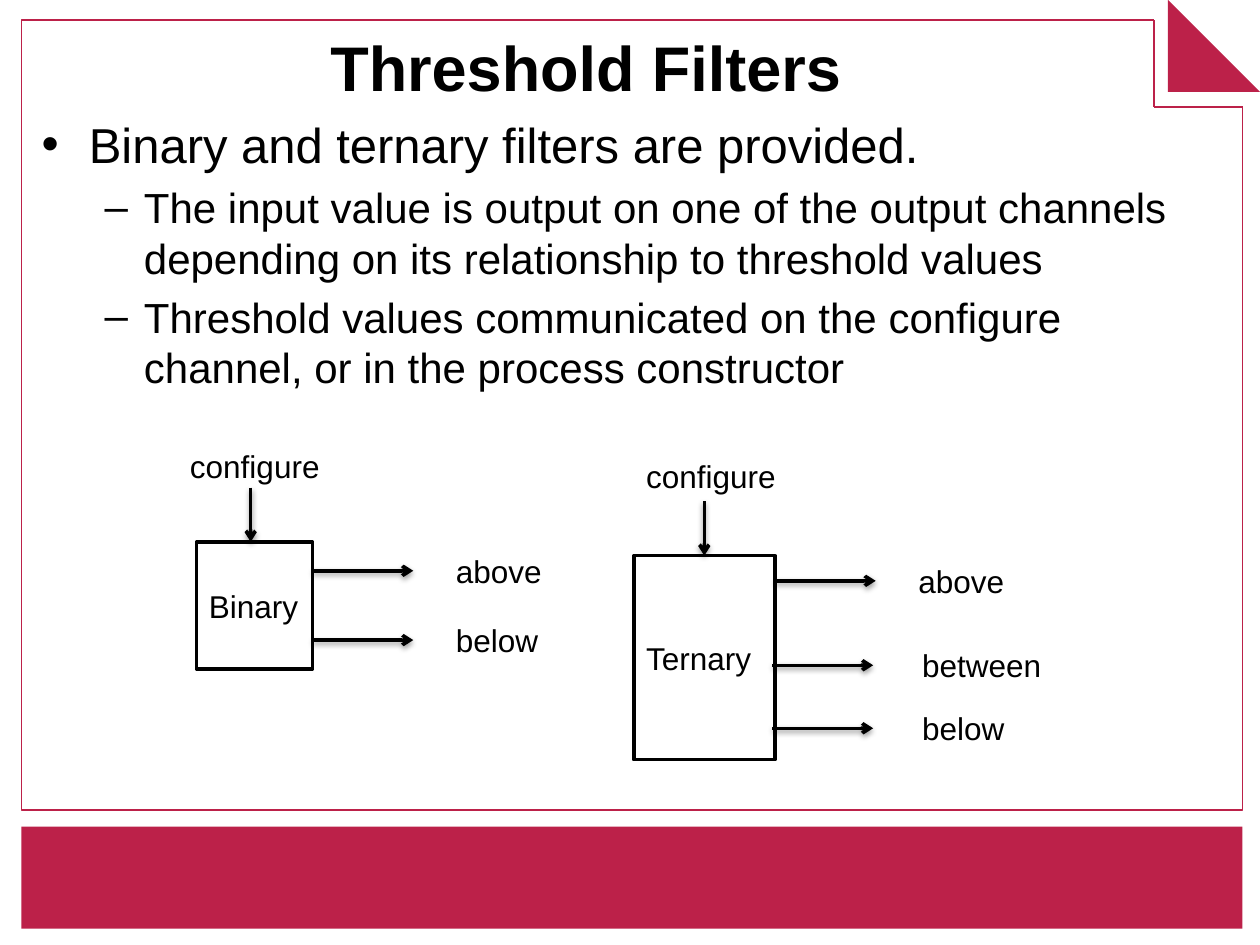
from lxml import etree
from pptx import Presentation
from pptx.dml.color import RGBColor
from pptx.enum.shapes import MSO_CONNECTOR, MSO_SHAPE
from pptx.enum.text import MSO_ANCHOR, MSO_AUTO_SIZE, PP_ALIGN
from pptx.oxml.ns import qn
from pptx.util import Inches, Pt

RECT, CORNER = MSO_SHAPE.RECTANGLE, MSO_SHAPE.RIGHT_TRIANGLE
LINE = MSO_CONNECTOR.STRAIGHT
LEFT, CENTER = PP_ALIGN.LEFT, PP_ALIGN.CENTER
TOP, MIDDLE = MSO_ANCHOR.TOP, MSO_ANCHOR.MIDDLE
FIXED = MSO_AUTO_SIZE.NONE
FONT, RED, BLACK, WHITE = "Arial", "BC2149", "000000", "FFFFFF"
COLS, ROWS = 100, 75
WIDTHS = {"configure": 12.4, "above": 8.9, "below": 8.6, "between": 11.6}


def color(code):
    """Turn a hex string into a colour."""
    return RGBColor.from_string(code)


def grid(*cells):
    """Turn grid cells, a hundred across the slide, into lengths."""
    return [Inches(cell * 10 / COLS) for cell in cells]


def write(para, size, bold=False, align=LEFT):
    """Format one paragraph and its runs."""
    para.alignment = align
    for run in para.runs:
        font = run.font
        font.name, font.size, font.bold = FONT, Pt(size), bold
        font.color.rgb = color(BLACK)


def block(slide, box, fill, edge=None, weight=0.75, kind=RECT):
    """Add a filled shape with an optional outline."""
    shape = slide.shapes.add_shape(kind, *grid(*box))
    shape.shadow.inherit = False
    shape.fill.solid()
    shape.fill.fore_color.rgb = color(fill)
    if edge:
        shape.line.color.rgb = color(edge)
        shape.line.width = Pt(weight)
    else:
        shape.line.fill.background()
    return shape


def rule(slide, start, end, code, weight):
    """Add a straight line."""
    line = slide.shapes.add_connector(LINE, *grid(*start, *end))
    line.line.color.rgb = color(code)
    line.line.width = Pt(weight)
    return line


def arrow(slide, start, end):
    """Add a shadowed line with an open head at its end."""
    line = rule(slide, start, end, BLACK, 2)
    etree.SubElement(line.line._get_or_add_ln(), qn("a:tailEnd"), type="arrow")


def label(slide, left, top, text):
    """Add a one-line caption."""
    box = slide.shapes.add_textbox(*grid(left, top, WIDTHS[text], 4))
    box.text_frame.text = text
    write(box.text_frame.paragraphs[0], 18)


def frame(slide, box):
    """Draw the notched page outline, the folded corner and the footer band."""
    left, top, wide, high = box
    right, notch = left + wide, 8.4
    edge = COLS - notch
    fold = 7.3
    block(slide, box, WHITE, RED)
    block(slide, (edge, 0, notch, notch), WHITE)
    block(slide, (COLS - fold, 0, fold, fold), RED, kind=CORNER)
    block(slide, (left, top + high + 1.3, wide, 8.1), RED)
    for start, end in (((edge, top), (edge, 8.5)), ((edge, 8.5), (right, 8.5))):
        line = rule(slide, start, end, RED, 0.75)
        etree.SubElement(line.element.spPr, qn("a:effectLst"))


def place(holder, box, anchor):
    """Move a placeholder to its box, in front of the frame."""
    holder.left, holder.top, holder.width, holder.height = grid(*box)
    holder.element.getparent().append(holder.element)
    text = holder.text_frame
    text.auto_size, text.vertical_anchor = FIXED, anchor
    return text


def head(slide, box, title):
    """Fill the title."""
    text = place(slide.shapes.title, box, MIDDLE)
    text.text = title
    write(text.paragraphs[0], 36, True, CENTER)


def points(slide, box, items):
    """Fill the two-level list."""
    text = place(slide.placeholders[1], box, TOP)
    text.text = "\n".join(item for level, item in items)
    for para, (level, item) in zip(text.paragraphs, items):
        para.level = level
        write(para, 24 if level else 28)


def filter_box(slide, box, name, note, stem, outs):
    """Draw a filter with its configure input and its output channels."""
    left, top, wide, high = box
    shape = block(slide, box, WHITE, BLACK, 2)
    text = shape.text_frame
    text.text = name
    text.word_wrap, text.vertical_anchor = True, MIDDLE
    text.margin_right = 0
    write(text.paragraphs[0], 18)
    label(slide, left + note[0], top + note[1], "configure")
    arrow(slide, (left + stem, top - 4.3), (left + stem, top))
    for row, inset, gap, word in outs:
        start, level = left + wide - inset, top + row
        arrow(slide, (start, level), (start + 8, level))
        label(slide, left + wide + gap, level - 2, word)


def main():
    """Build the slide."""
    deck = Presentation()
    deck.slide_width, deck.slide_height = grid(COLS, ROWS)
    slide = deck.slides.add_slide(deck.slide_layouts[1])
    frame(slide, (1.7, 1.6, 96.9, 62.7))
    head(slide, (2.3, 2.1, 88.4, 6.3), "Threshold Filters")
    points(slide, (2.3, 8.6, 95.3, 24), [
        (0, "Binary and ternary filters are provided."),
        (1, "The input value is output on one of the output channels "
            "depending on its relationship to threshold values"),
        (1, "Threshold values communicated on the configure channel, "
            "or in the process constructor"),
    ])
    filter_box(slide, (15.6, 43, 9.2, 10.1), "Binary", (-1.5, -8), 4.3, [
        (2.3, 0, 10.4, "above"),
        (7.8, 0, 10.4, "below"),
    ])
    filter_box(slide, (50.3, 44.1, 11.2, 16.2), "Ternary", (0, -8.3), 5.6, [
        (2, 0, 10.4, "above"),
        (8.7, 0.2, 10.7, "between"),
        (13.7, 0.2, 10.7, "below"),
    ])
    deck.save("out.pptx")


if __name__ == "__main__":
    main()
